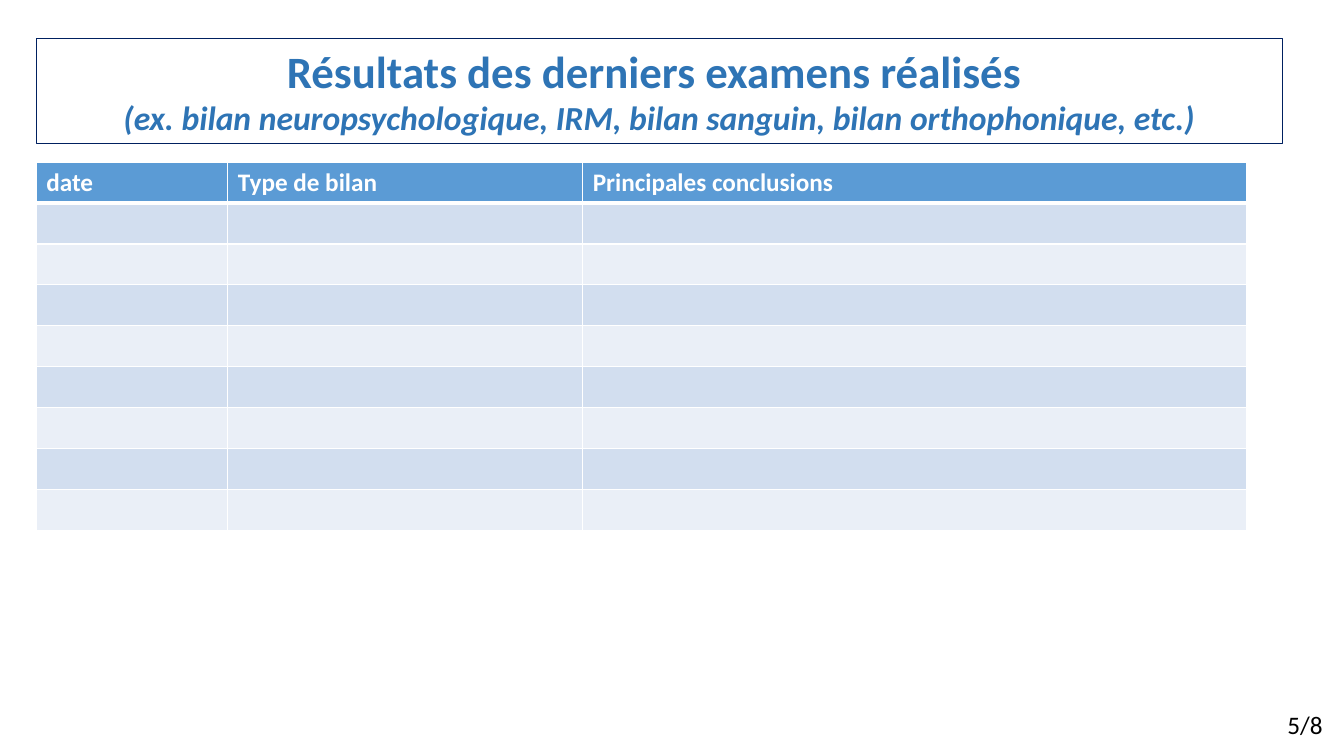
from lxml import etree
from pptx import Presentation
from pptx import util as u
from pptx.dml.color import RGBColor
from pptx.enum import text
from pptx.oxml.ns import qn

NAVY = RGBColor(0x00, 0x20, 0x60)
BLUE = RGBColor(0x2E, 0x74, 0xB5)
HEADER = RGBColor(0x5B, 0x9B, 0xD5)
BANDS = (RGBColor(0xD2, 0xDE, 0xEF), RGBColor(0xEA, 0xEF, 0xF7))
WHITE = RGBColor(0xFF, 0xFF, 0xFF)
BLACK = RGBColor(0, 0, 0)

TITLE_LINES = (
    ("Résultats des derniers examens réalisés ", {"size": u.Pt(32), "italic": False}),
    ("(ex. bilan neuropsychologique, IRM, bilan sanguin, bilan orthophonique, etc.)",
     {"size": u.Pt(24), "italic": True}),
)
COLUMNS = (("date", 1.9), ("Type de bilan", 3.52), ("Principales conclusions", 6.58))
EMPTY_ROWS = 8


def add_run(p, words, color, **formats):
    r = p.add_run()
    r.text = words
    r.font.color.rgb = color
    for name, value in {"name": "Calibri", "size": u.Pt(18), **formats}.items():
        setattr(r.font, name, value)


def place(sp, box):
    for name, value in zip(("left", "top", "width", "height"), box):
        setattr(sp, name, u.Inches(value))


def add_title(s, box):
    sp = s.shapes.title
    place(sp, box)
    sp.line.color.rgb = NAVY
    sp.line.width = u.Pt(0.75)
    tf = sp.text_frame
    tf.auto_size = text.MSO_AUTO_SIZE.SHAPE_TO_FIT_TEXT
    tf.vertical_anchor = text.MSO_ANCHOR.TOP
    for i, (words, formats) in enumerate(TITLE_LINES):
        p = tf.add_paragraph() if i else tf.paragraphs[0]
        p.alignment = text.PP_ALIGN.CENTER
        add_run(p, words, BLUE, bold=True, **formats)


def set_borders(cell, widths):
    tcPr = cell._tc.get_or_add_tcPr()
    for side, width in widths.items():
        ln = etree.SubElement(tcPr, qn(f"a:ln{side}"), w=str(u.Pt(width)))
        fill = etree.SubElement(ln, qn("a:solidFill"))
        etree.SubElement(fill, qn("a:srgbClr"), val=str(WHITE))


def add_results_table(s, box):
    rows = EMPTY_ROWS + 1
    tbl = s.shapes.add_table(rows, len(COLUMNS), *map(u.Inches, box)).table
    for col, (words, width) in enumerate(COLUMNS):
        tbl.columns[col].width = u.Inches(width)
        add_run(tbl.cell(0, col).text_frame.paragraphs[0], words, WHITE, bold=True)
        for row in range(rows):
            cell = tbl.cell(row, col)
            # The rule under the header is thicker than the others
            set_borders(cell, {"L": 1, "R": 1, "T": 3 if row == 1 else 1,
                               "B": 3 if row == 0 else 1})
            cell.fill.solid()
            cell.fill.fore_color.rgb = BANDS[(row - 1) % 2] if row else HEADER


def add_page_number(s, box):
    tf = s.shapes.add_textbox(*map(u.Inches, box)).text_frame
    tf.word_wrap = True
    tf.auto_size = text.MSO_AUTO_SIZE.SHAPE_TO_FIT_TEXT
    add_run(tf.paragraphs[0], "5/8", BLACK)


def main():
    prs = Presentation()
    prs.slide_width, prs.slide_height = u.Inches(13.33), u.Inches(7.5)
    s = prs.slides.add_slide(prs.slide_layouts[5])
    left = 0.36
    add_title(s, (left, 0.38, 12.36, 1.04))
    add_results_table(s, (left, 1.61, 12, 3.65))
    add_page_number(s, (12.67, 6.99, 0.67, 0.4))
    prs.save("out.pptx")


if __name__ == "__main__":
    main()
